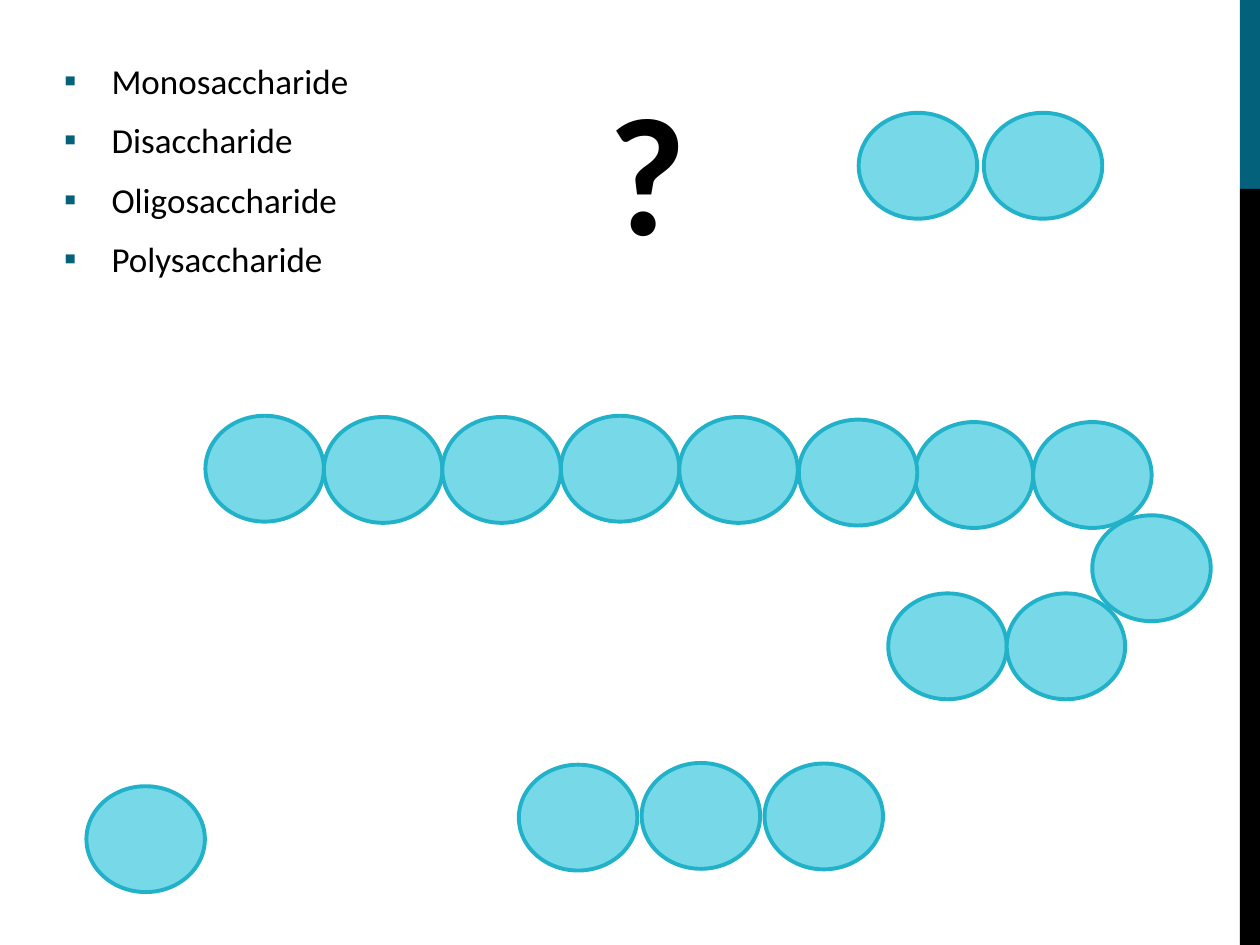
from dataclasses import dataclass

from lxml.etree import SubElement
from pptx import Presentation
from pptx.dml.color import RGBColor as Rgb
from pptx.enum.shapes import MSO_SHAPE as Preset
from pptx.enum.text import MSO_ANCHOR as Anchor, MSO_AUTO_SIZE as AutoSize
from pptx.oxml.ns import qn
from pptx.util import Pt


@dataclass(frozen=True)
class Theme:
    accent: Rgb = Rgb.from_string("04617B")
    black: Rgb = Rgb.from_string("000000")
    sugar_fill: Rgb = Rgb.from_string("77D9E8")
    sugar_line: Rgb = Rgb.from_string("21B2C9")
    font: str = "Calibri"
    list_size: float = 20
    question_size: float = 96


THEME = Theme()
SLIDE_WIDTH, SLIDE_HEIGHT = 720, 540
BAND_LEFT, BAND_SPLIT = 708.5, 108
SUGAR_WIDTH, SUGAR_HEIGHT = 67.7, 60.5
TERMS = ["Monosaccharide", "Disaccharide", "Oligosaccharide", "Polysaccharide"]


def add_band(slide, top, height, color):
    band = slide.shapes.add_shape(
        Preset.RECTANGLE, Pt(BAND_LEFT), Pt(top), Pt(SLIDE_WIDTH - BAND_LEFT), Pt(height))
    band.shadow.inherit = False
    band.fill.solid()
    band.fill.fore_color.rgb = color
    band.line.fill.background()


def add_sugar(slide, left, top):
    sugar = slide.shapes.add_shape(
        Preset.OVAL, Pt(left), Pt(top), Pt(SUGAR_WIDTH), Pt(SUGAR_HEIGHT))
    sugar.shadow.inherit = False
    sugar.fill.solid()
    sugar.fill.fore_color.rgb = THEME.sugar_fill
    sugar.line.color.rgb = THEME.sugar_line
    sugar.line.width = Pt(2.25)


def add_chain(slide, left, tops, pitch=SUGAR_WIDTH):
    """Place one sugar per top, evenly spaced from left to right."""
    for position, top in enumerate(tops):
        add_sugar(slide, left + position * pitch, top)


def add_text(paragraph, text, size, bold=False):
    run = paragraph.add_run()
    run.text = text
    run.font.name = THEME.font
    run.font.size = Pt(size)
    run.font.bold = bold
    run.font.color.rgb = THEME.black


def set_bullet(paragraph, indent=27):
    properties = paragraph._p.get_or_add_pPr()
    properties.set("marL", str(Pt(indent)))
    properties.set("indent", str(Pt(-indent)))
    color = SubElement(properties, qn("a:buClr"))
    SubElement(color, qn("a:srgbClr"), val=str(THEME.accent))
    SubElement(properties, qn("a:buFont"), typeface=THEME.font)
    SubElement(properties, qn("a:buChar"), char="▪")


def fill_terms(body):
    body.left, body.top, body.width, body.height = Pt(29.5), Pt(30.2), Pt(214.6), Pt(149)
    frame = body.text_frame
    frame.auto_size = AutoSize.NONE
    frame.vertical_anchor = Anchor.TOP
    for index, term in enumerate(TERMS):
        paragraph = frame.add_paragraph() if index else frame.paragraphs[0]
        paragraph.space_before = Pt(4)
        paragraph.space_after = Pt(6)
        set_bullet(paragraph)
        add_text(paragraph, term, THEME.list_size)


def add_question(slide):
    question = slide.shapes.add_textbox(Pt(340.6), Pt(35.3), Pt(51.8), Pt(123.8))
    frame = question.text_frame
    frame.word_wrap = True
    frame.auto_size = AutoSize.SHAPE_TO_FIT_TEXT
    add_text(frame.paragraphs[0], "?", THEME.question_size, bold=True)


def add_polysaccharide(slide):
    add_chain(slide, 507.6, [339.1] * 2)
    add_chain(slide, 522.7, [241.2] * 2)
    add_sugar(slide, 624.2, 294.5)
    add_chain(slide, 117.4, [237.6, 238.3, 238.3, 237.6, 238.3])
    add_sugar(slide, 456.5, 239.8)


def main():
    deck = Presentation()
    deck.slide_width, deck.slide_height = Pt(SLIDE_WIDTH), Pt(SLIDE_HEIGHT)
    slide = deck.slides.add_slide(deck.slide_layouts[1])
    heading = slide.shapes.title._element
    heading.getparent().remove(heading)

    add_band(slide, 0, BAND_SPLIT, THEME.accent)
    add_band(slide, BAND_SPLIT, SLIDE_HEIGHT - BAND_SPLIT, THEME.black)
    fill_terms(slide.placeholders[1])
    add_question(slide)
    add_chain(slide, 490.7, [64.5] * 2, pitch=71.5)
    add_polysaccharide(slide)
    add_chain(slide, 296.5, [437, 436, 436.3], pitch=70.2)
    add_sugar(slide, 49.4, 449.3)
    deck.save("out.pptx")


if __name__ == "__main__":
    main()
